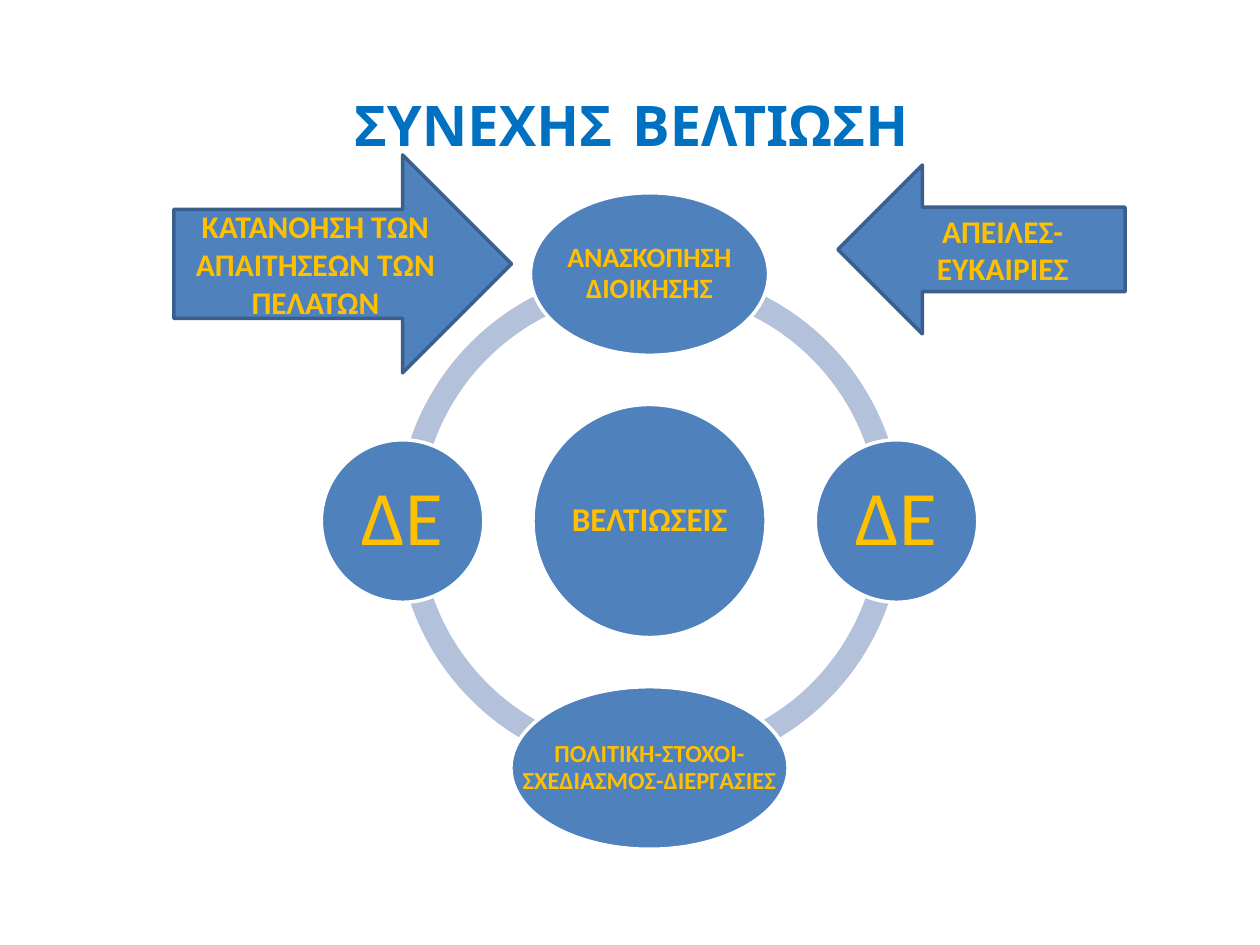
from pptx import Presentation
from pptx.dml.color import RGBColor
from pptx.enum.shapes import MSO_SHAPE
from pptx.enum.text import MSO_ANCHOR, PP_ALIGN
from pptx.util import Inches, Pt

ARC, ELLIPSE = MSO_SHAPE.BLOCK_ARC, MSO_SHAPE.OVAL
RIGHT, LEFT = MSO_SHAPE.RIGHT_ARROW, MSO_SHAPE.LEFT_ARROW
CENTER, MIDDLE = PP_ALIGN.CENTER, MSO_ANCHOR.MIDDLE

THEME = {
    "title": "0070C0", "fill": "4F81BD", "ring": "B3C1DB", "text": "FFC000",
    "node_line": "FFFFFF", "arrow_line": "3A5F8C",
    "title_font": "Comic Neue", "body_font": "Calibri",
    "title_size": 32, "arrow_size": 18, "center_size": 19,
    "review_size": 16, "policy_size": 14, "audit_size": 44,
}


def add_shape(kind, x, y, w, h, fill, line=None):
    sp = s.shapes.add_shape(kind, Inches(x), Inches(y), Inches(w), Inches(h))
    sp.shadow.inherit = False
    sp.fill.solid()
    sp.fill.fore_color.rgb = RGBColor.from_string(THEME[fill])
    if line:
        sp.line.color.rgb = RGBColor.from_string(THEME[line])
        sp.line.width = Pt(2)
    else:
        sp.line.fill.background()
    return sp


def set_text(sp, text, size, bold=True, font="body_font", color="text"):
    tf = sp.text_frame
    tf.word_wrap = True
    tf.vertical_anchor = MIDDLE
    p = tf.paragraphs[0]
    p.text = text
    p.alignment = CENTER
    p.font.name = THEME[font]
    p.font.size = Pt(THEME[size])
    p.font.bold = bold
    p.font.color.rgb = RGBColor.from_string(THEME[color])
    return tf


prs = Presentation()
prs.slide_width, prs.slide_height = Inches(10), Inches(7.5)
s = prs.slides.add_slide(prs.slide_layouts[5])

# Title
title = s.shapes.title
title.left, title.top = Inches(0.91), Inches(0.36)
title.width, title.height = Inches(8.2), Inches(1.25)
set_text(title, "ΣΥΝΕΧΗΣ ΒΕΛΤΙΩΣΗ", "title_size", font="title_font", color="title")

# Ring of four quarter arcs; a quarter turn is 54 in adjustment units
CX, CY, RING, ORBIT = 5.155, 4.135, 4.01, 1.96
QUARTER = 54
for i in range(4):
    arc = add_shape(ARC, CX - RING / 2, CY - RING / 2, RING, RING, "ring")
    arc.adjustments[0] = QUARTER * i
    arc.adjustments[1] = QUARTER * ((i + 1) % 4)
    arc.adjustments[2] = 0.046

# Centre and the nodes around it: direction, size, text, type size, bold
nodes = [
    (0, 0, 1.85, 1.85, "ΒΕΛΤΙΩΣΕΙΣ", "center_size", True),
    (0, -1, 1.89, 1.29, "ΑΝΑΣΚΟΠΗΣΗ\vΔΙΟΙΚΗΣΗΣ", "review_size", True),
    (1, 0, 1.29, 1.29, "ΔΕ", "audit_size", False),
    (0, 1, 2.2, 1.29, "ΠΟΛΙΤΙΚΗ-ΣΤΟΧΟΙ-\vΣΧΕΔΙΑΣΜΟΣ-ΔΙΕΡΓΑΣΙΕΣ", "policy_size", True),
    (-1, 0, 1.29, 1.29, "ΔΕ", "audit_size", False),
]
for dx, dy, w, h, text, size, bold in nodes:
    node = add_shape(ELLIPSE, CX + dx * ORBIT - w / 2, CY + dy * ORBIT - h / 2,
                     w, h, "fill", "node_line")
    tf = set_text(node, text, size, bold)
    tf.word_wrap = False
    tf.margin_left = tf.margin_right = tf.margin_top = tf.margin_bottom = Inches(0.02)
    tf.paragraphs[0].line_spacing = 0.9

# Input arrows
arrows = [
    (RIGHT, 1.38, 1.23, 2.68, 1.73, "ΚΑΤΑΝΟΗΣΗ ΤΩΝ ΑΠΑΙΤΗΣΕΩΝ ΤΩΝ ΠΕΛΑΤΩΝ"),
    (LEFT, 6.65, 1.31, 2.28, 1.34, "ΑΠΕΙΛΕΣ- ΕΥΚΑΙΡΙΕΣ"),
]
for kind, x, y, w, h, text in arrows:
    arrow = add_shape(kind, x, y, w, h, "fill", "arrow_line")
    set_text(arrow, text, "arrow_size")

prs.save("out.pptx")
